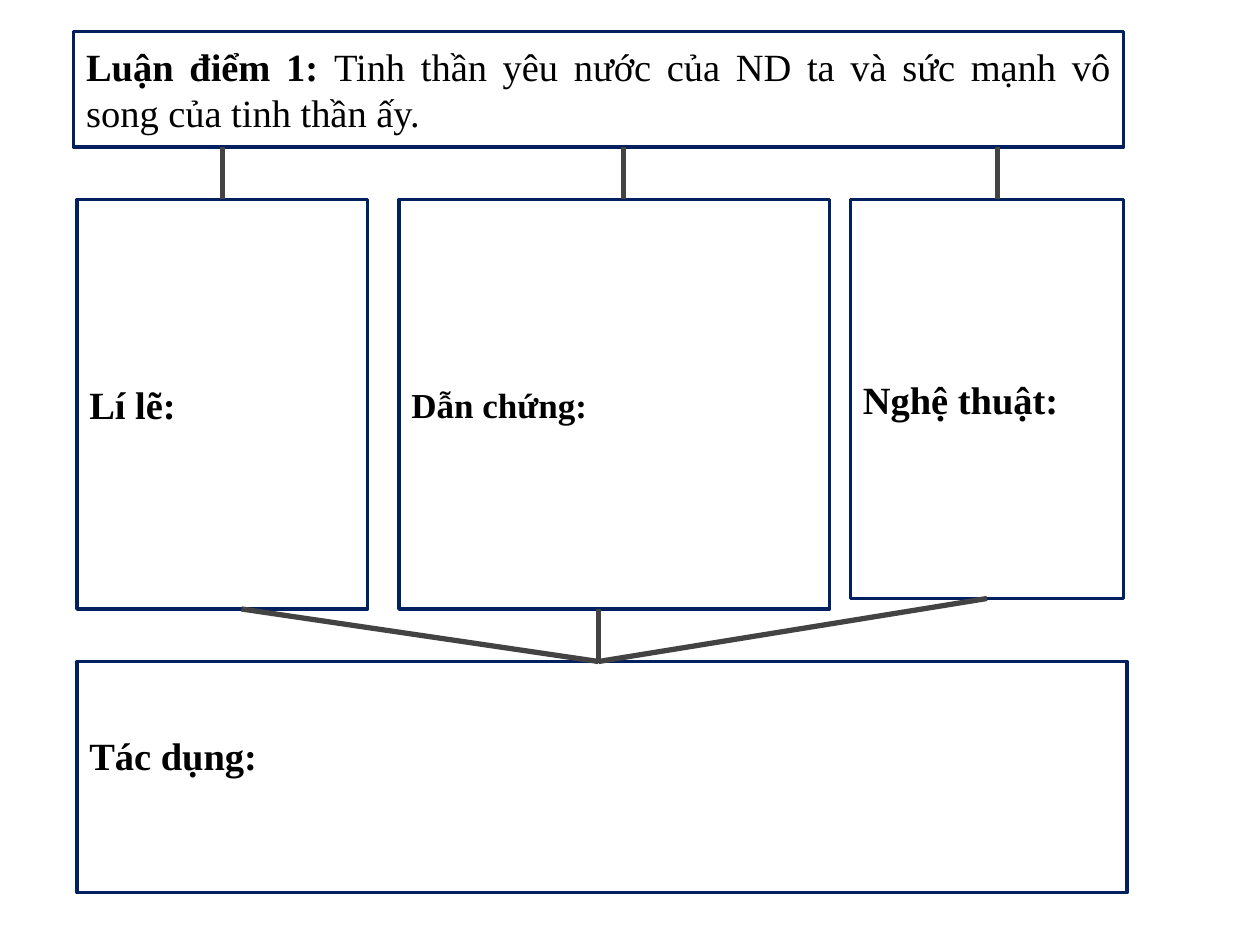
from dataclasses import dataclass
from typing import Optional

from lxml import etree
from pptx import Presentation
from pptx.dml.color import RGBColor
from pptx.enum import shapes, text
from pptx.oxml import ns
from pptx.util import Pt

COLORS = {"paper": "FFFFFF", "border": "002060", "ink": "000000", "link": "434343"}
FONT = "Times New Roman"
FRAME_FORMAT = {
    "word_wrap": True,
    "auto_size": text.MSO_AUTO_SIZE.NONE,
    "vertical_anchor": text.MSO_ANCHOR.MIDDLE,
}
COLUMN_TOP = 114
EFFECT_TOP = 378
HUB_X = 342
BOTTOM_SITE = 2
TOP_SITE = 0


@dataclass
class Box:
    left: float
    top: float
    width: float
    height: float
    heading: str
    body: str = ""
    size: float = 22
    bottom_inset: float = 3.6


@dataclass
class Link:
    start: tuple[float, float]
    end: tuple[float, float]
    start_box: Optional[int] = None  # column joined at its bottom middle
    end_box: Optional[int] = None  # column joined at its top middle


CLAIM = Box(42, 18, 600, 66, "Luận điểm 1: ",
            "Tinh thần yêu nước của ND ta và sức mạnh vô song của tinh thần ấy.")
COLUMNS = [
    Box(44, COLUMN_TOP, 166, 234, "Lí lẽ:"),
    Box(228, COLUMN_TOP, 246, 234, "Dẫn chứng:", size=20),
    Box(486, COLUMN_TOP, 156, 228, "Nghệ thuật:"),
]
# The larger bottom inset lifts the heading above the middle
EFFECT = Box(44, EFFECT_TOP, 600, 132, "Tác dụng:", bottom_inset=29)

CLAIM_BOTTOM = CLAIM.top + CLAIM.height
LINKS = [
    Link((127, CLAIM_BOTTOM), (127, COLUMN_TOP), end_box=0),
    Link((356.5, CLAIM_BOTTOM), (356.5, COLUMN_TOP)),
    Link((570, CLAIM_BOTTOM), (570, COLUMN_TOP)),
    Link((138, 348), (HUB_X, EFFECT_TOP)),
    Link((HUB_X, 348), (HUB_X, EFFECT_TOP)),
    Link((564, 342), (HUB_X, EFFECT_TOP), start_box=2),
]


def color(name: str) -> RGBColor:
    return RGBColor.from_string(COLORS[name])


def format_box(shape, box: Box) -> None:
    """Place a shape and give it the common border, fill and text."""
    for name in ("left", "top", "width", "height"):
        setattr(shape, name, Pt(getattr(box, name)))
    shape.fill.solid()
    shape.fill.fore_color.rgb = color("paper")
    shape.line.color.rgb = color("border")
    shape.line.width = Pt(2)

    frame = shape.text_frame
    for name, value in FRAME_FORMAT.items():
        setattr(frame, name, value)
    frame.margin_bottom = Pt(box.bottom_inset)
    paragraph = frame.paragraphs[0]
    paragraph.alignment = text.PP_ALIGN.JUSTIFY
    for content, bold in ((box.heading, True), (box.body, False)):
        if content:
            run = paragraph.add_run()
            run.text = content
            font_format = {"name": FONT, "size": Pt(box.size), "bold": bold}
            for name, value in font_format.items():
                setattr(run.font, name, value)
            run.font.color.rgb = color("ink")


def add_box(slide, box: Box):
    shape = slide.shapes.add_shape(
        shapes.MSO_SHAPE.ROUNDED_RECTANGLE,
        Pt(box.left), Pt(box.top), Pt(box.width), Pt(box.height))
    shape.adjustments[0] = 0
    shape.shadow.inherit = False
    format_box(shape, box)
    return shape


def add_link(slide, link: Link, columns: list) -> None:
    connector = slide.shapes.add_connector(
        shapes.MSO_CONNECTOR.STRAIGHT, *map(Pt, link.start + link.end))
    connector.line.color.rgb = color("link")
    connector.line.width = Pt(3)
    etree.SubElement(connector._element.spPr, ns.qn("a:effectLst"))
    if link.start_box is not None:
        connector.begin_connect(columns[link.start_box], BOTTOM_SITE)
    if link.end_box is not None:
        connector.end_connect(columns[link.end_box], TOP_SITE)


def main() -> None:
    presentation = Presentation()
    presentation.slide_width, presentation.slide_height = Pt(720), Pt(540)
    slide = presentation.slides.add_slide(presentation.slide_layouts[5])

    # Claim, its three columns and their combined effect
    format_box(slide.shapes.title, CLAIM)
    columns = [add_box(slide, box) for box in COLUMNS]
    add_box(slide, EFFECT)

    # Lines from the claim to the columns and on to the effect
    for link in LINKS:
        add_link(slide, link, columns)

    presentation.save("out.pptx")


if __name__ == "__main__":
    main()
